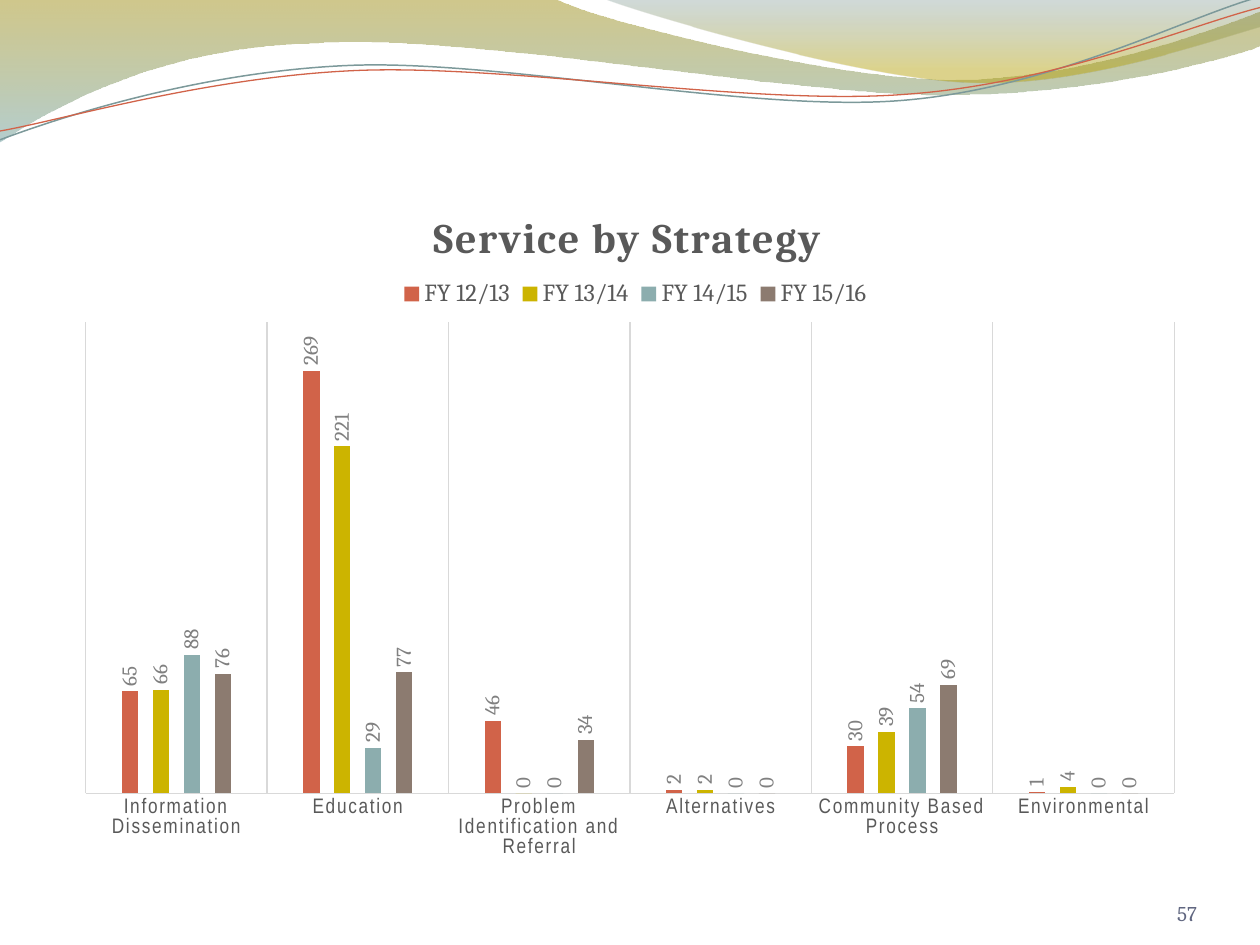
from lxml import etree
from pptx import Presentation
from pptx.chart.data import CategoryChartData
from pptx.dml.color import RGBColor
from pptx.enum import chart as ch, text
from pptx.oxml import parse_xml
from pptx.oxml.ns import nsdecls, qn
from pptx.util import Inches, Pt

WHITE = RGBColor(0xFF, 0xFF, 0xFF)
GRAY = RGBColor(0x59, 0x59, 0x59)
LABEL_GRAY = RGBColor(0x80, 0x80, 0x80)
GRID_GRAY = RGBColor(0xD9, 0xD9, 0xD9)
NUMBER_BLUE = RGBColor(0x60, 0x66, 0x80)
OLIVE = RGBColor(0x97, 0x85, 0x00)
TEAL = RGBColor(0x77, 0xA5, 0xA6)
DARK_TEAL = RGBColor(0x64, 0x84, 0x84)
GOLD = RGBColor(0xB4, 0x9F, 0x00)
LINE_TEAL = RGBColor(0x7C, 0x99, 0x9A)
RED = RGBColor(0xD1, 0x63, 0x49)
YELLOW = RGBColor(0xCC, 0xB4, 0x00)
PALE_TEAL = RGBColor(0x8C, 0xAD, 0xAE)
BROWN = RGBColor(0x8C, 0x7B, 0x70)
SERIF, NARROW = "Cambria", "Arial Narrow"

CATEGORIES = ["Information Dissemination", "Education",
              "Problem Identification and Referral", "Alternatives",
              "Community Based Process", "Environmental"]
SERIES = [("FY 12/13", RED, (65, 269, 46, 2, 30, 1)),
          ("FY 13/14", YELLOW, (66, 221, 0, 2, 39, 4)),
          ("FY 14/15", PALE_TEAL, (88, 29, 0, 0, 54, 0)),
          ("FY 15/16", BROWN, (76, 77, 34, 0, 69, 0))]

BANDS = [
    ([[(0, 0)], [(4.4, -0.01)],
      [(4.76, 0.17), (6.64, 0.63), (7.58, 0.63)],
      [(8.53, 0.63), (9.58, 0.26), (10, 0.09)], [(10.01, 0.36)],
      [(9.83, 0.44), (8.7, 0.76), (7.46, 0.75)],
      [(6.22, 0.75), (3.82, 0.28), (2.57, 0.34)],
      [(1.29, 0.36), (0.46, 0.83), (-0.01, 1.13)]],
     [(0, OLIVE, 45), (100, TEAL, 55)]),
    ([[(4.79, -0.01)],
      [(5.09, 0.11), (6.82, 0.62), (7.69, 0.65)],
      [(8.56, 0.69), (9.61, 0.32), (10, 0.21)], [(10, 0)]],
     [(0, DARK_TEAL, 30), (80, GOLD, 45)]),
]
WAVES = [
    ([[(0, 1.11)],
      [(0.48, 0.93), (1.58, 0.57), (2.77, 0.52)],
      [(3.95, 0.47), (5.93, 0.89), (7.13, 0.8)],
      [(8.33, 0.71), (9.38, 0.15), (9.98, -0.02)]], LINE_TEAL, 0.85),
    ([[(0, 1.04)],
      [(0.47, 0.96), (1.64, 0.61), (2.83, 0.56)],
      [(4.03, 0.51), (5.97, 0.84), (7.17, 0.75)],
      [(8.36, 0.67), (9.41, 0.21), (10, 0.06)]], RED, 0.75),
]


def format_font(font, size, color, name=SERIF, bold=False, spacing=None):
    """Set the look of a font."""
    font.size, font.name, font.bold = Pt(size), name, bold
    font.color.rgb = color
    if spacing:
        font._element.set("spc", str(spacing))


def add_text(frame, words, align=text.PP_ALIGN.LEFT, **style):
    """Write one formatted paragraph into a text frame."""
    paragraph = frame.paragraphs[0]
    paragraph.alignment = align
    run = paragraph.add_run()
    run.text = words
    format_font(run.font, **style)


def add_curve(slide, left, top, segments, close):
    """Draw an outline whose three-point segments are Bezier curves."""
    points = [(left + Inches(x), top + Inches(y))
              for segment in segments for x, y in segment]
    builder = slide.shapes.build_freeform(*points[0])
    builder.add_line_segments(points[1:], close=close)
    shape = builder.convert_to_shape()
    shape.shadow.inherit = False
    lines = iter(list(shape._element.iter(qn("a:lnTo"))))
    for segment in segments[1:]:
        steps = [next(lines) for _ in segment]
        if len(steps) == 3:
            curve = etree.Element(qn("a:cubicBezTo"))
            steps[0].addprevious(curve)
            for step in steps:
                curve.append(step[0])
                step.getparent().remove(step)
    return shape


def fill_gradient(shape, stops):
    """Fill a shape from top to bottom with translucent colours."""
    stop_xml = "".join(
        f'<a:gs pos="{position * 1000}"><a:srgbClr val="{color}">'
        f'<a:alpha val="{opacity * 1000}"/></a:srgbClr></a:gs>'
        for position, color, opacity in stops)
    gradient = parse_xml(f'<a:gradFill {nsdecls("a")}><a:gsLst>{stop_xml}</a:gsLst>'
                         '<a:lin ang="5400000" scaled="0"/></a:gradFill>')
    shape._element.spPr.find(qn("a:custGeom")).addnext(gradient)


def add_header(slide, left, top):
    """Draw the flowing bands and lines at the top of the slide."""
    for segments, stops in BANDS:
        band = add_curve(slide, left, top, segments, True)
        fill_gradient(band, stops)
        band.line.fill.background()
    for segments, color, width in WAVES:
        wave = add_curve(slide, left, top, segments, False)
        wave.fill.background()
        wave.line.color.rgb = color
        wave.line.width = Pt(width)


def place_part(part, after=None, inner=False, **place):
    """Give a chart part a manual layout in fractions of the chart."""
    for old in part.findall(qn("c:layout")):
        part.remove(old)
    target = '<c:layoutTarget val="inner"/>' if inner else ""
    modes = "".join(f'<c:{key}Mode val="edge"/>' for key in "xy")
    values = "".join(f'<c:{key} val="{value}"/>' for key, value in place.items())
    layout = parse_xml(f'<c:layout {nsdecls("c")}><c:manualLayout>{target}{modes}'
                       f'{values}</c:manualLayout></c:layout>')
    part.insert(0, layout)
    if after:
        part.find(qn(after)).addnext(layout)


def format_axes(chart):
    """Show category separators and hide the value axis."""
    category = chart.category_axis
    category.major_tick_mark = category.minor_tick_mark = ch.XL_TICK_MARK.NONE
    category.has_major_gridlines = True
    for line in (category.format.line, category.major_gridlines.format.line):
        line.color.rgb = GRID_GRAY
        line.width = Pt(0.75)
    format_font(category.tick_labels.font, 12, GRAY, NARROW, spacing=100)
    value = chart.value_axis
    value.minimum_scale, value.maximum_scale = 0, 300
    value.has_major_gridlines = False
    value.visible = False


def format_series(series, color):
    """Colour one series and stand its labels upright above the bars."""
    series.format.fill.solid()
    series.format.fill.fore_color.rgb = color
    series.invert_if_negative = False
    labels = series.data_labels
    labels.show_value = True
    labels.position = ch.XL_LABEL_POSITION.OUTSIDE_END
    format_font(labels.font, 12, LABEL_GRAY)
    body = labels._element.find(qn("c:txPr")).find(qn("a:bodyPr"))
    body.set("rot", "-5400000")
    body.set("vert", "horz")


def add_strategy_chart(slide, left, top, width, height):
    """Add the clustered column chart of services by strategy."""
    data = CategoryChartData()
    data.categories = CATEGORIES
    for name, _, values in SERIES:
        data.add_series(name, values)
    chart = slide.shapes.add_chart(ch.XL_CHART_TYPE.COLUMN_CLUSTERED,
                                   left, top, width, height, data).chart
    format_font(chart.font, 10, GRAY)
    chart.has_title = True
    add_text(chart.chart_title.text_frame, "Service by Strategy",
             text.PP_ALIGN.CENTER, size=24, color=GRAY, bold=True, spacing=100)
    chart.has_legend = True
    chart.legend.position = ch.XL_LEGEND_POSITION.TOP
    chart.legend.include_in_layout = False
    format_font(chart.legend.font, 14, GRAY)
    plot = chart.plots[0]
    plot.gap_width, plot.overlap, plot.vary_by_categories = 444, -90, False
    for series, (_, color, _) in zip(plot.series, SERIES):
        format_series(series, color)
    format_axes(chart)
    place_part(chart.chart_title._element, "c:tx", x=0.32, y=0.05)
    place_part(chart.legend._element, "c:legendPos", x=0.29, y=0.15, w=0.43, h=0.06)
    place_part(plot._element.getparent(), inner=True, x=0.02, y=0.22, w=0.96, h=0.67)


def add_slide_number(slide, left, top, width, height):
    """Add the page number at the lower right."""
    frame = slide.shapes.add_textbox(left, top, width, height).text_frame
    frame.word_wrap = True
    frame.margin_left = frame.margin_right = frame.margin_top = frame.margin_bottom = 0
    frame.vertical_anchor = text.MSO_ANCHOR.BOTTOM
    add_text(frame, "57", text.PP_ALIGN.RIGHT, size=12, color=NUMBER_BLUE)


def main():
    """Build and save the slide."""
    presentation = Presentation()
    presentation.slide_width, presentation.slide_height = Inches(10), Inches(7.5)
    slide = presentation.slides.add_slide(presentation.slide_layouts[6])
    slide.background.fill.solid()
    slide.background.fill.fore_color.rgb = WHITE
    add_header(slide, 0, 0)
    add_slide_number(slide, Inches(8.67), Inches(6.95), Inches(0.83), Inches(0.4))
    add_strategy_chart(slide, Inches(0.5), Inches(1.33), Inches(9), Inches(5.58))
    presentation.save("out.pptx")


if __name__ == "__main__":
    main()
